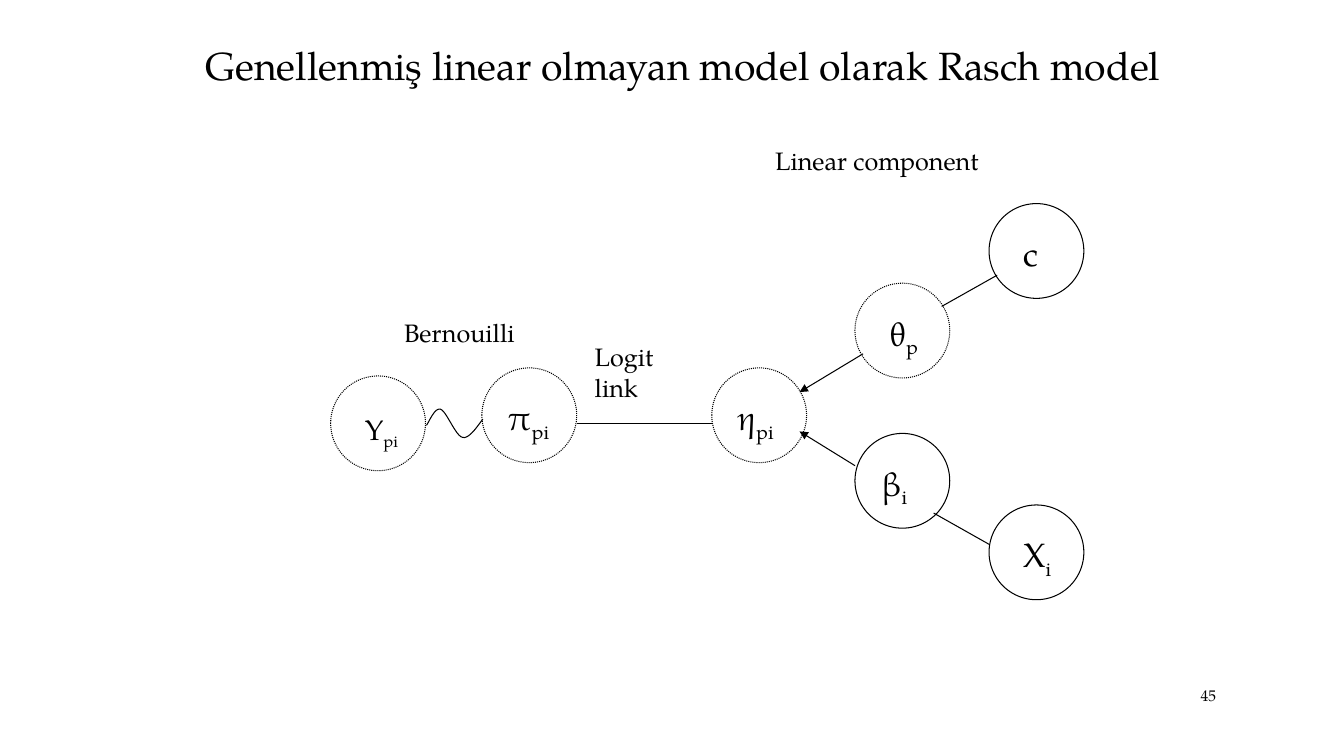
from lxml.etree import SubElement
from pptx import Presentation
from pptx.dml.color import RGBColor
from pptx.enum.dml import MSO_LINE_DASH_STYLE as DASH
from pptx.enum.shapes import MSO_CONNECTOR as CONNECTOR, MSO_SHAPE as SHAPE
from pptx.enum.text import MSO_ANCHOR as ANCHOR, PP_ALIGN as ALIGN
from pptx.oxml.ns import qn
from pptx.util import Inches, Pt

COLORS = {"ink": RGBColor.from_string("000000")}
FONT = "TeX Gyre Pagella"
ROWS = 75

deck = Presentation()
deck.slide_width, deck.slide_height = Inches(13.33), Inches(7.5)
slide = deck.slides.add_slide(deck.slide_layouts[6])
CELL = deck.slide_height / ROWS


def write(text, col, row, cols, rows, size, subscript="", wrap=True):
    box = slide.shapes.add_textbox(*(int(n * CELL) for n in (col, row, cols, rows)))
    frame = box.text_frame
    frame.word_wrap = wrap
    paragraph = frame.paragraphs[0]
    paragraph.add_run().text = text
    if subscript:
        index = paragraph.add_run()
        index.text = subscript
        index._r.get_or_add_rPr().set("baseline", "-25000")
    paragraph.font.name = FONT
    paragraph.font.size = Pt(size)
    paragraph.font.color.rgb = COLORS["ink"]
    return frame


def outline(line, dotted=False):
    line.color.rgb = COLORS["ink"]
    line.width = Pt(0.75)
    if dotted:
        line.dash_style = DASH.ROUND_DOT


DIAMETER = 9.4
nodes = [
    ("Y", "pi", 32.8, 37.3, True, 20, 2.4, 3.1, 11),
    ("π", "pi", 47.8, 36.5, True, 24, 1.6, 2.4, 6.3),
    ("η", "pi", 70.6, 36.5, True, 24, 1.6, 2.4, 6.3),
    ("θ", "p", 84.8, 28.1, True, 24, 2.4, 2.4, 8.7),
    ("β", "i", 84.8, 43, False, 24, 1.6, 2.4, 6.3),
    ("c", "", 98.1, 20.2, False, 24, 2.4, 2.4, 8.7),
    ("X", "i", 98.1, 50.1, False, 24, 2.4, 2.4, 8.7),
]
for symbol, index, col, row, latent, size, indent, drop, cols in nodes:
    node = slide.shapes.add_shape(
        SHAPE.OVAL, *(int(n * CELL) for n in (col, row, DIAMETER, DIAMETER)))
    node.shadow.inherit = False
    node.fill.background()
    outline(node.line, latent)
    write(symbol, col + indent, row + drop, cols, size / 5, size, index)

links = [
    (85.6, 35.1, 79.3, 38.9, True),
    (84.8, 46.2, 79.3, 42.8, True),
    (70.6, 42, 57.2, 42, False),
    (93.4, 30.4, 98.9, 27.3, False),
    (92.6, 50.9, 98.1, 54, False),
]
for *ends, arrow in links:
    link = slide.shapes.add_connector(
        CONNECTOR.STRAIGHT, *(int(n * CELL) for n in ends))
    outline(link.line)
    if arrow:
        SubElement(link.line._get_or_add_ln(), qn("a:tailEnd"), type="triangle")
    SubElement(link._element.spPr, qn("a:effectLst"))

STEPS = 12
wave_curves = [
    ((42.3, 42.2), (42.5, 42), (43.1, 40.4), (43.7, 40.6)),
    ((43.7, 40.6), (44.3, 40.8), (45.2, 43.3), (45.9, 43.4)),
    ((45.9, 43.4), (46.6, 43.6), (47.6, 41.9), (47.9, 41.6)),
]
wave_points = []
for curve in wave_curves:
    for step in range(1, STEPS + 1):
        t = step / STEPS
        weights = ((1 - t) ** 3, 3 * t * (1 - t) ** 2, 3 * t * t * (1 - t), t ** 3)
        wave_points.append(tuple(
            int(CELL * sum(w * n for w, n in zip(weights, axis))) for axis in zip(*curve)))
start_x, start_y = (int(n * CELL) for n in wave_curves[0][0])
wave_path = slide.shapes.build_freeform(start_x, start_y)
wave_path.add_line_segments(wave_points, close=False)
wave = wave_path.convert_to_shape()
wave.shadow.inherit = False
wave.fill.background()
outline(wave.line)

write("Genellenmiş linear olmayan model olarak Rasch model", 19.4, 3.6, 99.2, 5.7, 28)
write("Linear component", 75.9, 13.9, 22.5, 4, 18, wrap=False)
write("Bernouilli", 39.1, 31, 13.1, 4, 18, wrap=False)
write("Logit link", 58, 33.4, 11.8, 7, 18)

page_number = write("45", 110.8, 67.5, 10.8, 3, 11)
page_number.vertical_anchor = ANCHOR.MIDDLE
page_number.paragraphs[0].alignment = ALIGN.RIGHT

deck.save("out.pptx")
